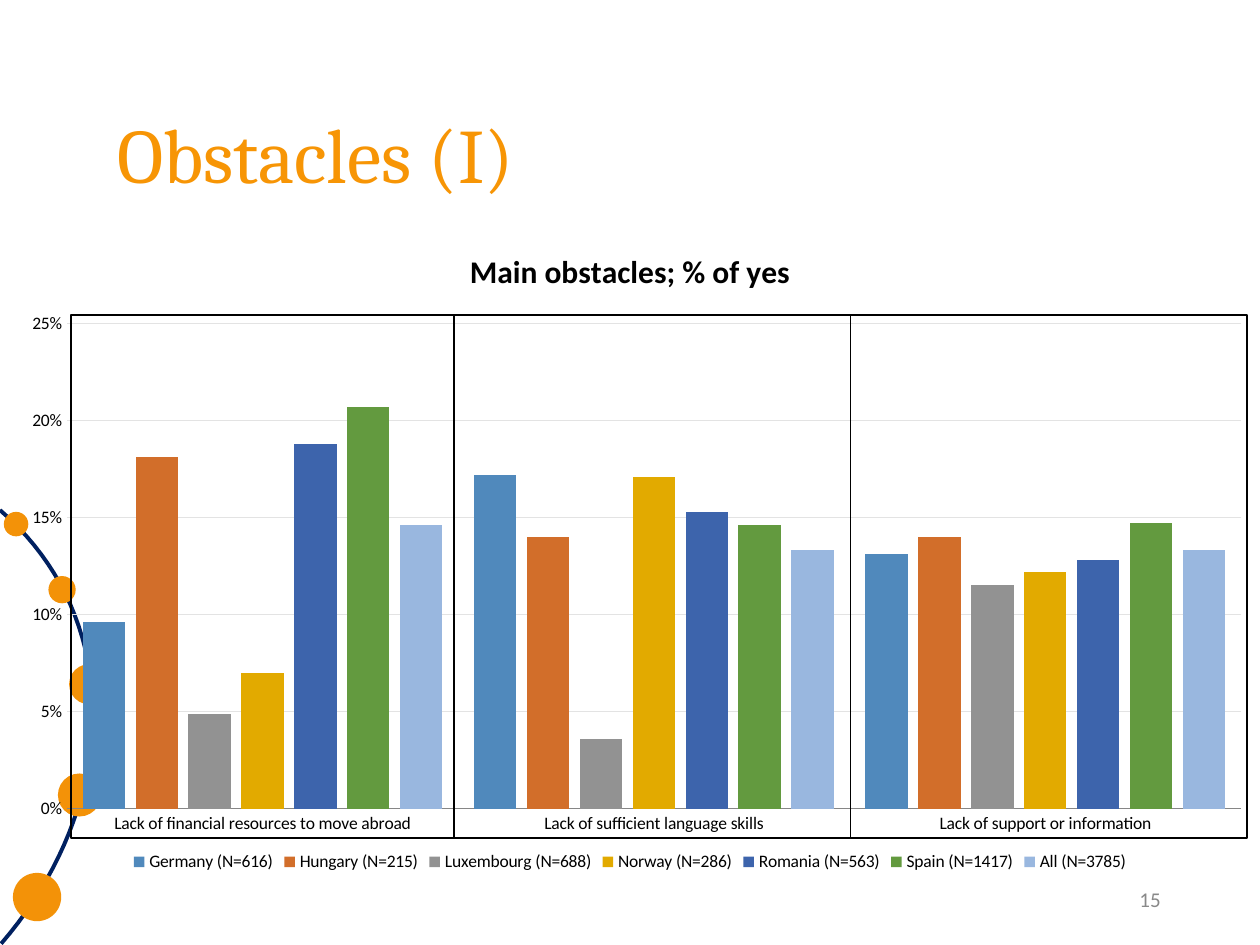
"""Build the slide on main obstacles, with a clustered column chart by country."""
from lxml import etree
from pptx import Presentation
from pptx.chart.data import CategoryChartData
from pptx.dml.color import RGBColor
from pptx.enum.chart import XL_CHART_TYPE, XL_LEGEND_POSITION, XL_TICK_MARK
from pptx.enum.shapes import MSO_SHAPE
from pptx.enum.text import MSO_ANCHOR, PP_ALIGN
from pptx.util import Pt

COLUMNS = XL_CHART_TYPE.COLUMN_CLUSTERED
BOTTOM = XL_LEGEND_POSITION.BOTTOM
NO_TICKS = XL_TICK_MARK.NONE
OVAL, RECTANGLE = MSO_SHAPE.OVAL, MSO_SHAPE.RECTANGLE
MIDDLE = MSO_ANCHOR.MIDDLE
LEFT, RIGHT = PP_ALIGN.LEFT, PP_ALIGN.RIGHT
CHART_NS = "http://schemas.openxmlformats.org/drawingml/2006/chart"

COLORS = {
    "title": "F79505", "number": "898989", "arc": "002060", "dot": "F39208",
    "black": "000000", "grid": "E3E3E3", "axis": "868686",
}
CATEGORIES = [
    "Lack of financial resources to move abroad",
    "Lack of sufficient language skills",
    "Lack of support or information",
]
SERIES = [
    ("Germany (N=616)", (0.096, 0.172, 0.131), "5089BC"),
    ("Hungary (N=215)", (0.181, 0.14, 0.14), "D26E2A"),
    ("Luxembourg (N=688)", (0.049, 0.036, 0.115), "929292"),
    ("Norway (N=286)", (0.07, 0.171, 0.122), "E2AA00"),
    ("Romania (N=563)", (0.188, 0.153, 0.128), "3D64AC"),
    ("Spain (N=1417)", (0.207, 0.146, 0.147), "639A3F"),
    ("All (N=3785)", (0.146, 0.133, 0.133), "99B7DF"),
]
ARC = [(0, 291.5), (72.7, 354.2), (68.4, 460.8), (0.7, 539.3)]
ARC_STEPS = 40
DOTS = [(9.2, 299.5, 14), (35.5, 337, 15.6), (51, 391, 23), (45.4, 454.3, 24.6), (21.2, 512.6, 27.6)]
PLOT = {"x": 0.053, "y": 0.152, "w": 0.932, "h": 0.744}
FRAME_EDGES = [40.5, 259.3, 486, 712.8]


def color(name):
    """Return the named colour."""
    return RGBColor.from_string(COLORS[name])


def bezier(points, t):
    """Return the point at t on a cubic curve."""
    weights = ((1 - t) ** 3, 3 * t * (1 - t) ** 2, 3 * t ** 2 * (1 - t), t ** 3)
    return tuple(Pt(sum(w * p[axis] for w, p in zip(weights, points))) for axis in (0, 1))


def add_arc(page):
    """Draw the curved line at the left edge."""
    curve = [bezier(ARC, step / ARC_STEPS) for step in range(ARC_STEPS + 1)]
    builder = page.shapes.build_freeform(*curve[0])
    builder.add_line_segments(curve[1:], close=False)
    arc = builder.convert_to_shape()
    arc.shadow.inherit = False
    arc.fill.background()
    arc.line.color.rgb = color("arc")
    arc.line.width = Pt(2.25)


def add_dot(page, x, y, size):
    """Add a filled circle centred on x, y."""
    dot = page.shapes.add_shape(OVAL, Pt(x - size / 2), Pt(y - size / 2), Pt(size), Pt(size))
    dot.shadow.inherit = False
    dot.fill.solid()
    dot.fill.fore_color.rgb = color("dot")
    dot.line.fill.background()


def add_frame(page, left, right):
    """Outline one group of columns."""
    frame = page.shapes.add_shape(RECTANGLE, Pt(left), Pt(180), Pt(right - left), Pt(299))
    frame.shadow.inherit = False
    frame.fill.background()
    frame.line.color.rgb = color("black")
    frame.line.width = Pt(1)


def add_text(page, area, text, font, size, tint, align):
    """Add a one-line text box."""
    box = page.shapes.add_textbox(*map(Pt, area))
    box.text_frame.word_wrap = True
    box.text_frame.vertical_anchor = MIDDLE
    para = box.text_frame.paragraphs[0]
    para.text = text
    para.alignment = align
    para.line_spacing = 0.9
    para.font.name = font
    para.font.size = Pt(size)
    para.font.color.rgb = color(tint)


def place_plot(chart):
    """Fix the inner plot area as fractions of the chart."""
    area = chart.plots[0]._element.getparent()
    for old in area.findall(f"{{{CHART_NS}}}layout"):
        area.remove(old)
    layout = etree.Element(f"{{{CHART_NS}}}layout")
    manual = etree.SubElement(layout, f"{{{CHART_NS}}}manualLayout")
    settings = {"layoutTarget": "inner", "xMode": "edge", "yMode": "edge", **PLOT}
    for tag, value in settings.items():
        etree.SubElement(manual, f"{{{CHART_NS}}}{tag}").set("val", str(value))
    area.insert(0, layout)


def style_axes(chart):
    """Set the scale, gridlines and axis lines."""
    values, categories = chart.value_axis, chart.category_axis
    for axis in (values, categories):
        axis.major_tick_mark = axis.minor_tick_mark = NO_TICKS
    values.minimum_scale, values.maximum_scale, values.major_unit = 0, 0.25, 0.05
    values.tick_labels.number_format = "0%"
    values.tick_labels.number_format_is_linked = False
    values.format.line.fill.background()
    values.major_gridlines.format.line.color.rgb = color("grid")
    values.major_gridlines.format.line.width = Pt(0.75)
    categories.format.line.color.rgb = color("axis")
    categories.format.line.width = Pt(0.75)


def add_obstacle_chart(page):
    """Add the column chart with its title and legend."""
    data = CategoryChartData(number_format="0.0%")
    data.categories = CATEGORIES
    for name, values, _ in SERIES:
        data.add_series(name, values)
    chart = page.shapes.add_chart(COLUMNS, Pt(0), Pt(128), Pt(720), Pt(373), data).chart
    chart.font.name = "Calibri"
    chart.font.size = Pt(10)
    chart.font.color.rgb = color("black")
    chart.has_title = True
    chart.chart_title.text_frame.text = "Main obstacles; % of yes"
    title_font = chart.chart_title.text_frame.paragraphs[0].font
    title_font.name = "Calibri"
    title_font.size = Pt(18)
    title_font.bold = True
    title_font.color.rgb = color("black")
    chart.has_legend = True
    chart.legend.position = BOTTOM
    chart.legend.include_in_layout = False
    plot = chart.plots[0]
    plot.vary_by_categories = False
    plot.gap_width, plot.overlap = 75, -25
    for series, (_, _, tint) in zip(plot.series, SERIES):
        series.format.fill.solid()
        series.format.fill.fore_color.rgb = RGBColor.from_string(tint)
    style_axes(chart)
    place_plot(chart)


def main():
    """Build and save the deck."""
    deck = Presentation()
    deck.slide_width, deck.slide_height = Pt(720), Pt(540)
    page = deck.slides.add_slide(deck.slide_layouts[6])
    add_arc(page)
    for dot in DOTS:
        add_dot(page, *dot)
    add_text(page, (59.8, 48.2, 597.6, 85), "Obstacles (I)", "Cambria", 44, "title", LEFT)
    add_text(page, (508.3, 500.4, 162, 28.8), "15", "Calibri", 12, "number", RIGHT)
    add_obstacle_chart(page)
    for left, right in zip(FRAME_EDGES, FRAME_EDGES[1:]):
        add_frame(page, left, right)
    deck.save("out.pptx")


if __name__ == "__main__":
    main()
